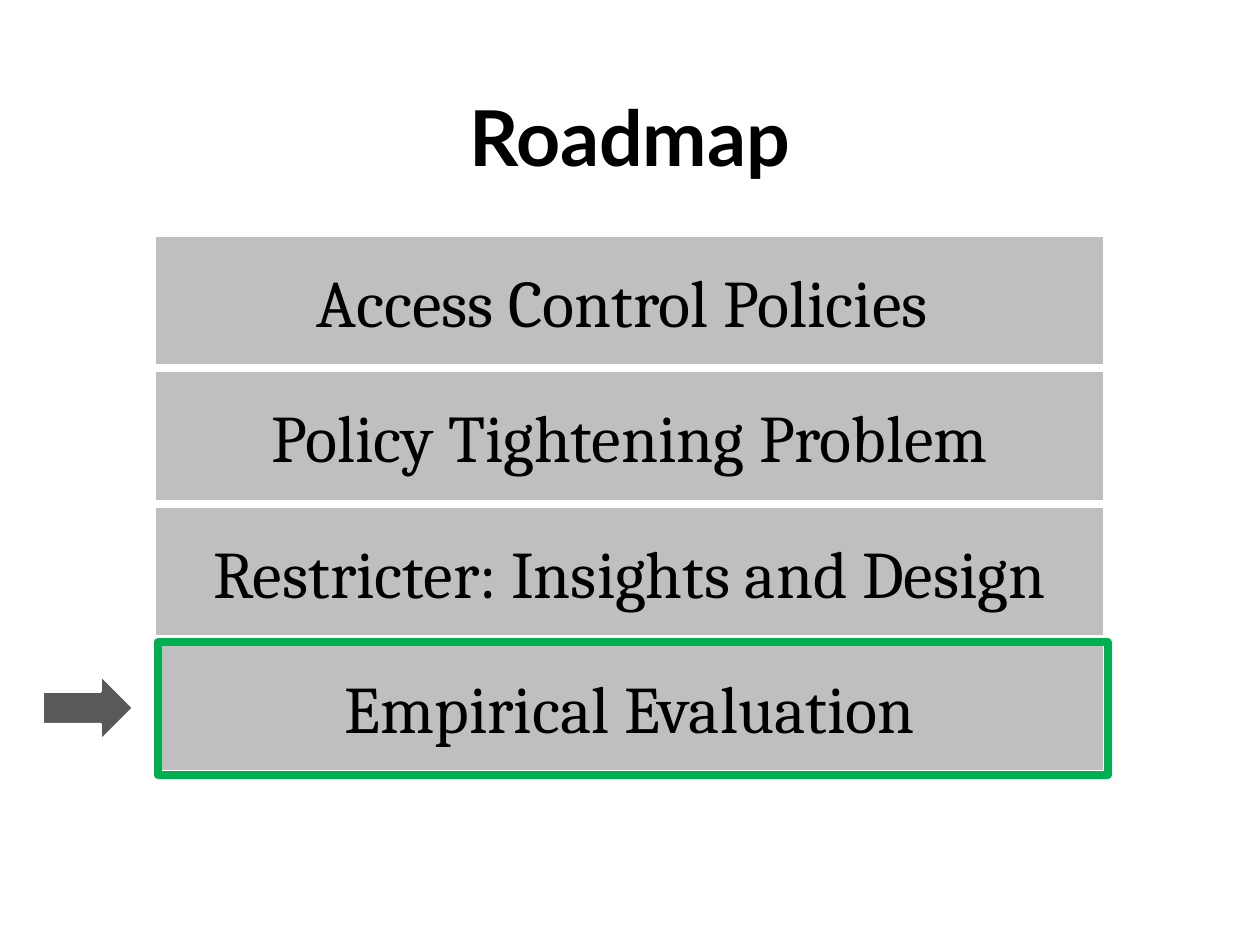
from pptx import Presentation
from pptx.dml.color import RGBColor as RGB
from pptx.enum.shapes import MSO_SHAPE as Kind
from pptx.enum.text import MSO_ANCHOR as Anchor, PP_ALIGN as Align
from pptx.util import Cm, Pt

TITLE = "Roadmap"
STEPS = [
    "Access Control Policies ",
    "Policy Tightening Problem",
    "Restricter: Insights and Design",
    "Empirical Evaluation",
]
HEX = {"bar": "BFBFBF", "edge": "FFFFFF", "arrow": "595959",
       "frame": "00B050", "text": "000000"}
LEFT, TOP, WIDE, HIGH, PITCH = 3.12, 4.75, 19.15, 2.62, 2.73


def tint(name):
    return RGB.from_string(HEX[name])


def draw(kind, box, fill, line, width):
    shape = slide.shapes.add_shape(kind, *map(Cm, box))
    shape.shadow.inherit = False
    if fill:
        shape.fill.solid()
        shape.fill.fore_color.rgb = tint(fill)
    else:
        shape.fill.background()
    shape.line.color.rgb = tint(line)
    shape.line.width = Pt(width)
    return shape


def write(shape, text, face, size, bold=False):
    frame = shape.text_frame
    frame.text = text
    frame.word_wrap = True
    frame.vertical_anchor = Anchor.MIDDLE
    para = frame.paragraphs[0]
    para.alignment = Align.CENTER
    font = para.font
    font.name, font.size, font.bold = face, Pt(size), bold
    font.color.rgb = tint("text")
    return para


deck = Presentation()
deck.slide_width, deck.slide_height = Cm(25.4), Cm(19.05)
slide = deck.slides.add_slide(deck.slide_layouts[5])

title = slide.shapes.title
title.left, title.top, title.width, title.height = map(Cm, (1.75, 1.02, 21.9, 3.68))
write(title, TITLE, "Lato", 44, True).line_spacing = 0.9

for row, step in enumerate(STEPS):
    bar = draw(Kind.RECTANGLE, (LEFT, TOP + row * PITCH, WIDE, HIGH), "bar", "edge", 1.5)
    write(bar, step, "Cambria", 38)

draw(Kind.RIGHT_ARROW, (0.86, 13.61, 1.83, 1.32), "arrow", "edge", 1.5)
draw(Kind.RECTANGLE, (3.18, 12.95, WIDE, 2.67), None, "frame", 4.5)

deck.save("out.pptx")
